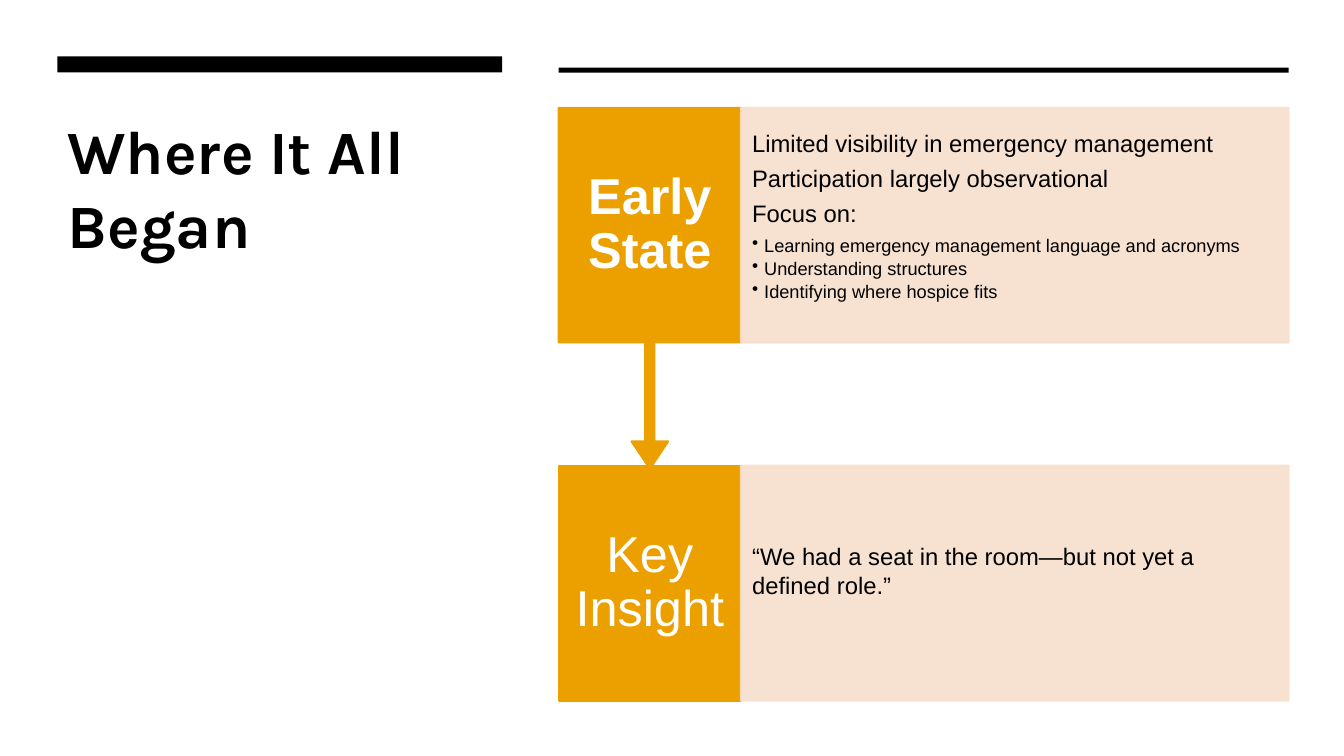
import pptx
import pptx.util
import pptx.dml.color
import pptx.enum.shapes
import pptx.enum.text
import pptx.oxml.ns
import lxml.etree

Inches, Pt = pptx.util.Inches, pptx.util.Pt
SHAPE = pptx.enum.shapes.MSO_SHAPE
ANCHOR = pptx.enum.text.MSO_ANCHOR
ALIGN = pptx.enum.text.PP_ALIGN
BLACK = pptx.dml.color.RGBColor(0x00, 0x00, 0x00)
WHITE = pptx.dml.color.RGBColor(0xFF, 0xFF, 0xFF)
AMBER = pptx.dml.color.RGBColor(0xEB, 0xA0, 0x00)
PEACH = pptx.dml.color.RGBColor(0xF7, 0xDF, 0xCC)

TITLE = "Where It All Began"
STAGES = [
    {"label": "Early State", "bold": True, "anchor": ANCHOR.TOP, "bottom": 0.24,
     "lines": [("point", "Limited visibility in emergency management"),
               ("point", "Participation largely observational"),
               ("point", "Focus on:"),
               ("bullet", "Learning emergency management language and acronyms"),
               ("bullet", "Understanding structures"),
               ("bullet", "Identifying where hospice fits")]},
    {"label": "Key Insight", "bold": False, "anchor": ANCHOR.MIDDLE, "bottom": 0.49,
     "lines": [("quote", "“We had a seat in the room—but not yet a defined role.”")]},
]
FORMATS = {
    "title": {"font": {"name": "Karla", "size": Pt(44), "bold": True}, "color": BLACK,
              "para": {"alignment": ALIGN.LEFT}},
    "label": {"font": {"name": "Arial", "size": Pt(36)}, "color": WHITE,
              "para": {"alignment": ALIGN.CENTER, "line_spacing": 0.9}},
    "point": {"font": {"name": "Arial", "size": Pt(17)}, "color": BLACK,
              "para": {"alignment": ALIGN.LEFT, "line_spacing": 0.9, "space_after": Pt(6.5)}},
    "bullet": {"font": {"name": "Arial", "size": Pt(13)}, "color": BLACK,
               "para": {"alignment": ALIGN.LEFT, "line_spacing": 0.9,
                        "space_after": Pt(2.5), "level": 1}},
    "quote": {"font": {"name": "Arial", "size": Pt(17)}, "color": BLACK,
              "para": {"alignment": ALIGN.LEFT}},
}

LEFT, TITLE_WIDTH = 0.57, 4.41
LABEL_LEFT, LABEL_WIDTH = 5.54, 1.81
DETAIL_LEFT, DETAIL_WIDTH = LABEL_LEFT + LABEL_WIDTH, 3 * LABEL_WIDTH
TOP, ROW_HEIGHT, ROW_PITCH = 1.07, 2.33, 3.55
CALLOUT_HEIGHT = 3.58
RULES = [(LEFT, 0.56, TITLE_WIDTH, 0.16),
         (LABEL_LEFT, 0.67, 4 * LABEL_WIDTH, 0.05)]


def set_values(target, values):
    for name, value in values.items():
        setattr(target, name, value)


def add_block(page, preset, place, color, outlined=True, opacity=None):
    block = page.shapes.add_shape(preset, *map(Inches, place))
    block.shadow.inherit = False
    block.fill.solid()
    block.fill.fore_color.rgb = color
    if outlined:
        block.line.color.rgb = color
        block.line.width = Pt(1.5)
    else:
        block.line.fill.background()
    if opacity:
        properties = block.fill._xPr
        for tint in list(properties.iter(pptx.oxml.ns.qn("a:srgbClr"))):
            alpha = lxml.etree.SubElement(tint, pptx.oxml.ns.qn("a:alpha"))
            alpha.set("val", str(opacity * 1000))
    return block


def write(frame, lines, anchor, insets, bold=None):
    left, top, right, bottom = map(Inches, insets)
    set_values(frame, {"word_wrap": True, "vertical_anchor": anchor,
                       "auto_size": pptx.enum.text.MSO_AUTO_SIZE.NONE,
                       "margin_left": left, "margin_top": top,
                       "margin_right": right, "margin_bottom": bottom})
    for index, (style, text) in enumerate(lines):
        para = frame.add_paragraph() if index else frame.paragraphs[0]
        set_values(para, FORMATS[style]["para"])
        if style == "bullet":
            properties = para._p.get_or_add_pPr()
            properties.set("marL", str(Inches(0.12)))
            properties.set("indent", str(-Inches(0.12)))
            mark = lxml.etree.SubElement(properties, pptx.oxml.ns.qn("a:buChar"))
            mark.set("char", "•")
        span = para.add_run()
        span.text = text
        set_values(span.font, FORMATS[style]["font"])
        span.font.color.rgb = FORMATS[style]["color"]
        if bold is not None:
            span.font.bold = bold


def main():
    deck = pptx.Presentation()
    deck.slide_width, deck.slide_height = Inches(13.33), Inches(7.5)
    page = deck.slides.add_slide(deck.slide_layouts[5])

    title = page.shapes.title
    set_values(title, {"left": Inches(LEFT), "top": Inches(TOP),
                       "width": Inches(TITLE_WIDTH), "height": Inches(3.68)})
    write(title.text_frame, [("title", TITLE)], ANCHOR.TOP, (0.1, 0.05, 0.1, 0.05))

    for place in RULES:
        add_block(page, SHAPE.RECTANGLE, place, BLACK, outlined=False)

    for row, stage in reversed(list(enumerate(STAGES))):
        top = TOP + row * ROW_PITCH
        label_place = (LABEL_LEFT, top, LABEL_WIDTH, ROW_HEIGHT)
        if row < len(STAGES) - 1:
            callout = add_block(page, SHAPE.UP_ARROW_CALLOUT,
                                (LABEL_LEFT, top, LABEL_WIDTH, CALLOUT_HEIGHT), AMBER)
            callout.rotation = 180
            for index, share in enumerate((0.05, 0.1, 0.15, 0.65)):
                callout.adjustments[index] = share
            label = page.shapes.add_textbox(*map(Inches, label_place))
        else:
            label = add_block(page, SHAPE.RECTANGLE, label_place, AMBER)
        write(label.text_frame, [("label", stage["label"])], ANCHOR.MIDDLE,
              (0.13, 0.28, 0.13, 0.28), stage["bold"])

        detail = add_block(page, SHAPE.RECTANGLE,
                           (DETAIL_LEFT, top, DETAIL_WIDTH, ROW_HEIGHT), PEACH, opacity=90)
        write(detail.text_frame, stage["lines"], stage["anchor"],
              (0.11, 0.24, 0.11, stage["bottom"]))

    deck.save("out.pptx")


if __name__ == "__main__":
    main()
